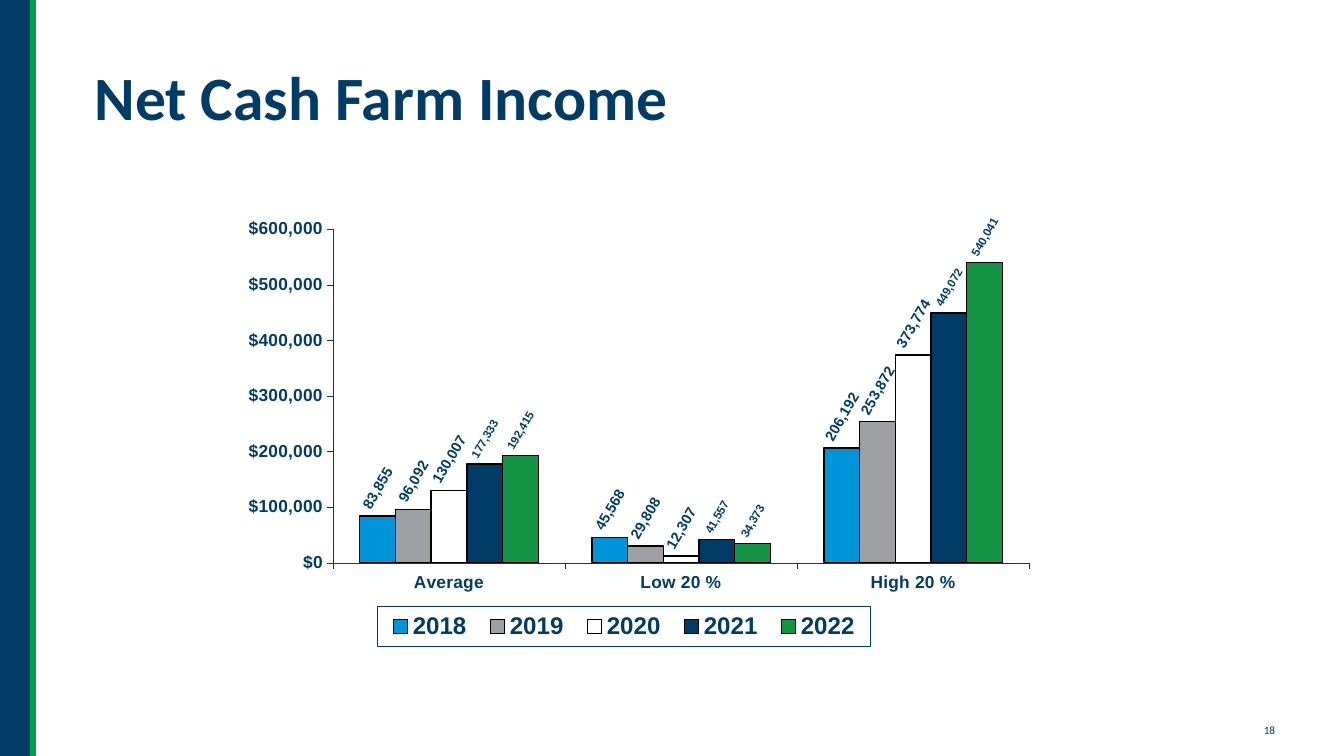
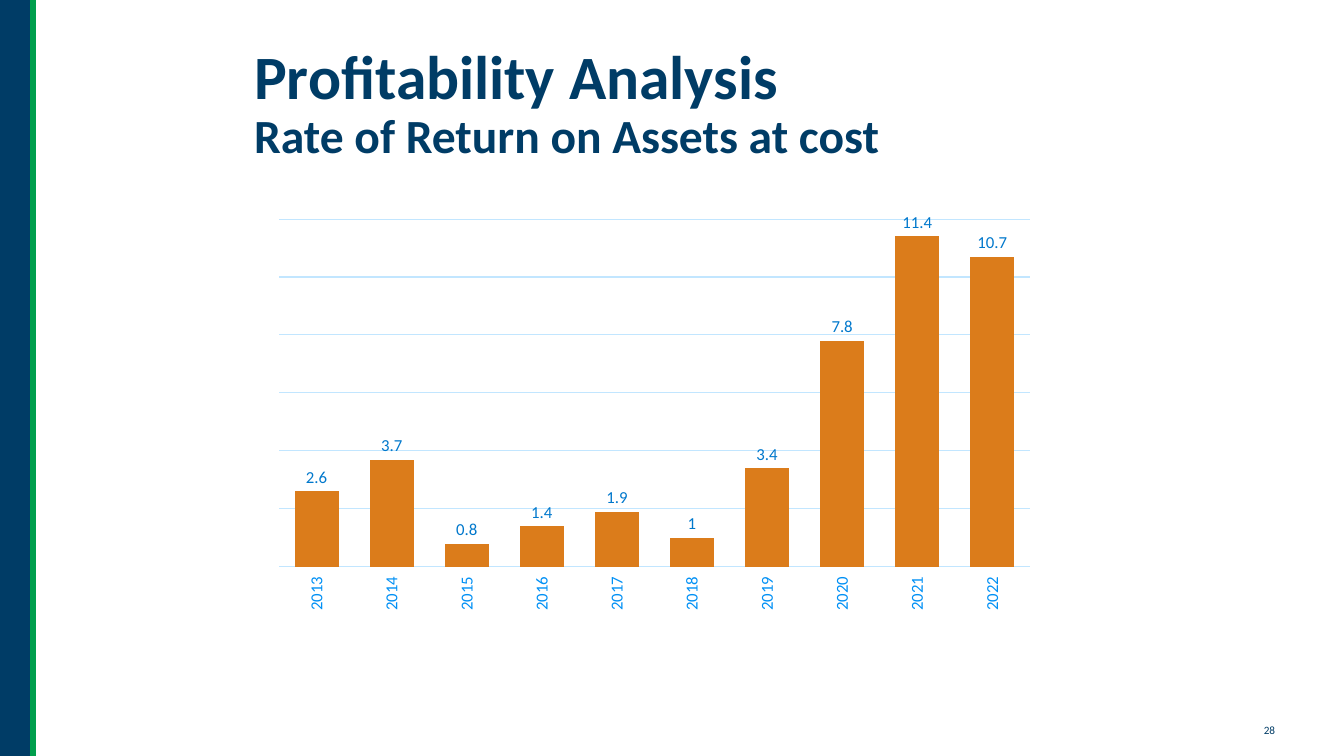
from lxml import etree
from pptx import Presentation
from pptx import util as u
from pptx.chart import data as chart_data
from pptx.dml.color import RGBColor
from pptx.enum import chart as ch, shapes, text
from pptx.oxml.ns import qn

COLOURS = {
    "navy": "003C66", "green": "009F4D", "black": "000000",
    "sky": "0095DA", "grey": "9D9FA2", "white": "FFFFFF", "leaf": "139445",
    "orange": "DB7C1B", "axis blue": "0090F5", "label blue": "0078CC",
    "grid blue": "C2E6FF",
}
WIDTH, HEIGHT = u.Cm(33.87), u.Cm(19.05)
BAND_WIDTH = u.Cm(0.84)


def colour(name):
    return RGBColor.from_string(COLOURS[name])


def set_attributes(target, **values):
    for name, value in values.items():
        setattr(target, name, value)


def set_font(font, size, colour_name="navy", name="Calibri", bold=False):
    set_attributes(font, size=u.Pt(size), name=name, bold=bold)
    font.color.rgb = colour(colour_name)


def set_line(line, colour_name, width):
    line.color.rgb = colour(colour_name)
    line.width = u.Pt(width)


def rotate_text(element, degrees):
    body = element.find(qn("c:txPr")).find(qn("a:bodyPr"))
    body.set("rot", str(degrees * 60000))
    body.set("vert", "horz")


def set_layout(parent, index, box, inner=False):
    """Place a chart part by fractions of the chart: left, top, width, height."""
    for old in parent.findall(qn("c:layout")):
        parent.remove(old)
    layout = etree.Element(qn("c:layout"))
    manual = etree.SubElement(layout, qn("c:manualLayout"))
    values = [("layoutTarget", "inner")] if inner else []
    values += [("xMode", "edge"), ("yMode", "edge")]
    values += zip("xywh", box)
    for tag, value in values:
        etree.SubElement(manual, qn("c:" + tag)).set("val", str(value))
    parent.insert(index, layout)


class Deck:
    def __init__(self):
        self.presentation = Presentation()
        set_attributes(self.presentation, slide_width=WIDTH, slide_height=HEIGHT)
        self.slide = None

    def add_slide(self, number):
        layout = self.presentation.slide_layouts.get_by_name("Title Only")
        self.slide = self.presentation.slides.add_slide(layout)
        self.add_band()
        self.add_number(number)

    def add_band(self):
        band = self.slide.shapes.add_shape(
            shapes.MSO_SHAPE.RECTANGLE, 0, 0, BAND_WIDTH, HEIGHT)
        band.shadow.inherit = False
        band.fill.solid()
        band.fill.fore_color.rgb = colour("navy")
        band.line.fill.background()
        edge = self.slide.shapes.add_connector(
            shapes.MSO_CONNECTOR.STRAIGHT, BAND_WIDTH, 0, BAND_WIDTH, HEIGHT)
        set_line(edge.line, "green", 4.5)
        etree.SubElement(edge._element.spPr, qn("a:effectLst"))

    def add_number(self, number):
        shape = self.slide.shapes.add_textbox(
            u.Cm(31.6), u.Cm(18.11), u.Cm(0.86), u.Cm(0.61))
        shape.text_frame.word_wrap = False
        run = shape.text_frame.paragraphs[0].add_run()
        run.text = str(number)
        set_font(run.font, 8)

    def add_title(self, box, *lines):
        title = self.slide.shapes.title
        left, top, width, height = map(u.Cm, box)
        set_attributes(title, left=left, top=top, width=width, height=height)
        set_attributes(title.text_frame, word_wrap=True,
                       auto_size=text.MSO_AUTO_SIZE.NONE,
                       vertical_anchor=text.MSO_ANCHOR.MIDDLE)
        paragraph = title.text_frame.paragraphs[0]
        set_attributes(paragraph, alignment=text.PP_ALIGN.LEFT, line_spacing=0.9)
        for index, (words, size) in enumerate(lines):
            if index:
                paragraph.add_line_break()
            run = paragraph.add_run()
            run.text = words
            set_font(run.font, size, bold=True)

    def add_columns(self, box, plot_box, categories, series, gap, overlap=0):
        """Add a column chart; series holds (name, colour, values) rows."""
        data = chart_data.CategoryChartData()
        data.categories = categories
        for name, _, values in series:
            data.add_series(name, values)
        chart = self.slide.shapes.add_chart(
            ch.XL_CHART_TYPE.COLUMN_CLUSTERED, *map(u.Cm, box), data).chart
        set_attributes(chart, has_title=False, has_legend=False)
        set_font(chart.font, 10)
        plot = chart.plots[0]
        set_attributes(plot, gap_width=gap, overlap=overlap,
                       vary_by_categories=False)
        set_layout(chart._chartSpace.chart.plotArea, 0, plot_box, inner=True)
        for column, (_, fill, _) in zip(plot.series, series):
            column.invert_if_negative = False
            column.format.fill.solid()
            column.format.fill.fore_color.rgb = colour(fill)
        return chart

    def label_values(self, column, number_format, **font):
        labels = column.data_labels
        set_attributes(labels, show_value=True, number_format=number_format,
                       number_format_is_linked=False,
                       position=ch.XL_LABEL_POSITION.OUTSIDE_END)
        set_font(labels.font, **font)
        return labels

    def add_legend(self, chart, box, **font):
        chart.has_legend = True
        legend = chart.legend
        set_attributes(legend, position=ch.XL_LEGEND_POSITION.BOTTOM,
                       include_in_layout=False)
        set_font(legend.font, **font)
        element = legend._element
        set_layout(element, 1, box)
        border = etree.Element(qn("c:spPr"))
        line = etree.SubElement(border, qn("a:ln"), w=str(u.Pt(0.25)))
        fill = etree.SubElement(line, qn("a:solidFill"))
        etree.SubElement(fill, qn("a:srgbClr"), val=COLOURS["navy"])
        element.find(qn("c:txPr")).addprevious(border)


def add_income_slide(deck):
    deck.add_slide(18)
    deck.add_title((2.13, 0.84, 29.64, 3.38), ("Net Cash Farm Income", 44))
    series = [
        ("2018", "sky", (83855, 45568, 206192)),
        ("2019", "grey", (96092, 29808, 253872)),
        ("2020", "white", (130007, 12307, 373774)),
        ("2021", "navy", (177333, 41557, 449072)),
        ("2022", "leaf", (192415, 34373, 540041)),
    ]
    chart = deck.add_columns(
        (5.94, 5, 22.91, 11.58), (0.107, 0.067, 0.766, 0.726),
        ("Average", "Low 20 %", "High 20 %"), series, gap=150)
    bold_arial = {"name": "Arial", "bold": True}

    # Columns and slanted labels
    for column, size in zip(chart.plots[0].series, (10.4, 10.4, 10.4, 8.3, 8.3)):
        set_line(column.format.line, "black", 1.04)
        labels = deck.label_values(column, "#,##0", size=size, **bold_arial)
        rotate_text(labels._element, -60)

    # Axes
    for axis in (chart.category_axis, chart.value_axis):
        set_attributes(axis, has_major_gridlines=False,
                       major_tick_mark=ch.XL_TICK_MARK.OUTSIDE,
                       minor_tick_mark=ch.XL_TICK_MARK.NONE)
        set_line(axis.format.line, "navy", 0.25)
        set_font(axis.tick_labels.font, 12.4, **bold_arial)
    set_attributes(chart.value_axis, minimum_scale=0, maximum_scale=600000,
                   major_unit=100000)
    set_attributes(chart.value_axis.tick_labels, number_format='"$"#,##0',
                   number_format_is_linked=False)

    deck.add_legend(chart, (0.156, 0.888, 0.542, 0.087), size=17.2, **bold_arial)


def add_return_slide(deck):
    deck.add_slide(28)
    deck.add_title((6.15, 0.84, 21.59, 3.61), ("Profitability Analysis", 44),
                   ("Rate of Return on Assets at cost", 34))
    values = (2.6, 3.7, 0.8, 1.4, 1.9, 1, 3.4, 7.8, 11.4, 10.7)
    chart = deck.add_columns(
        (5.87, 5, 21.95, 11.58), (0.053, 0.045, 0.862, 0.757),
        [str(year) for year in range(2013, 2023)],
        [("Series 1", "orange", values)], gap=70, overlap=10)
    deck.label_values(chart.plots[0].series[0], "General", size=12,
                      colour_name="label blue")

    # Upright year labels
    years = chart.category_axis
    set_attributes(years, major_tick_mark=ch.XL_TICK_MARK.NONE,
                   minor_tick_mark=ch.XL_TICK_MARK.NONE,
                   tick_label_position=ch.XL_TICK_LABEL_POSITION.LOW)
    years.format.line.fill.background()
    set_font(years.tick_labels.font, 12, "axis blue")
    rotate_text(years._element, -90)

    # Hidden value axis with gridlines
    rates = chart.value_axis
    set_attributes(rates, visible=False, has_major_gridlines=True,
                   minimum_scale=0, maximum_scale=12, major_unit=2)
    set_line(rates.major_gridlines.format.line, "grid blue", 0.75)


def main():
    deck = Deck()
    add_income_slide(deck)
    add_return_slide(deck)
    deck.presentation.save("out.pptx")


if __name__ == "__main__":
    main()
